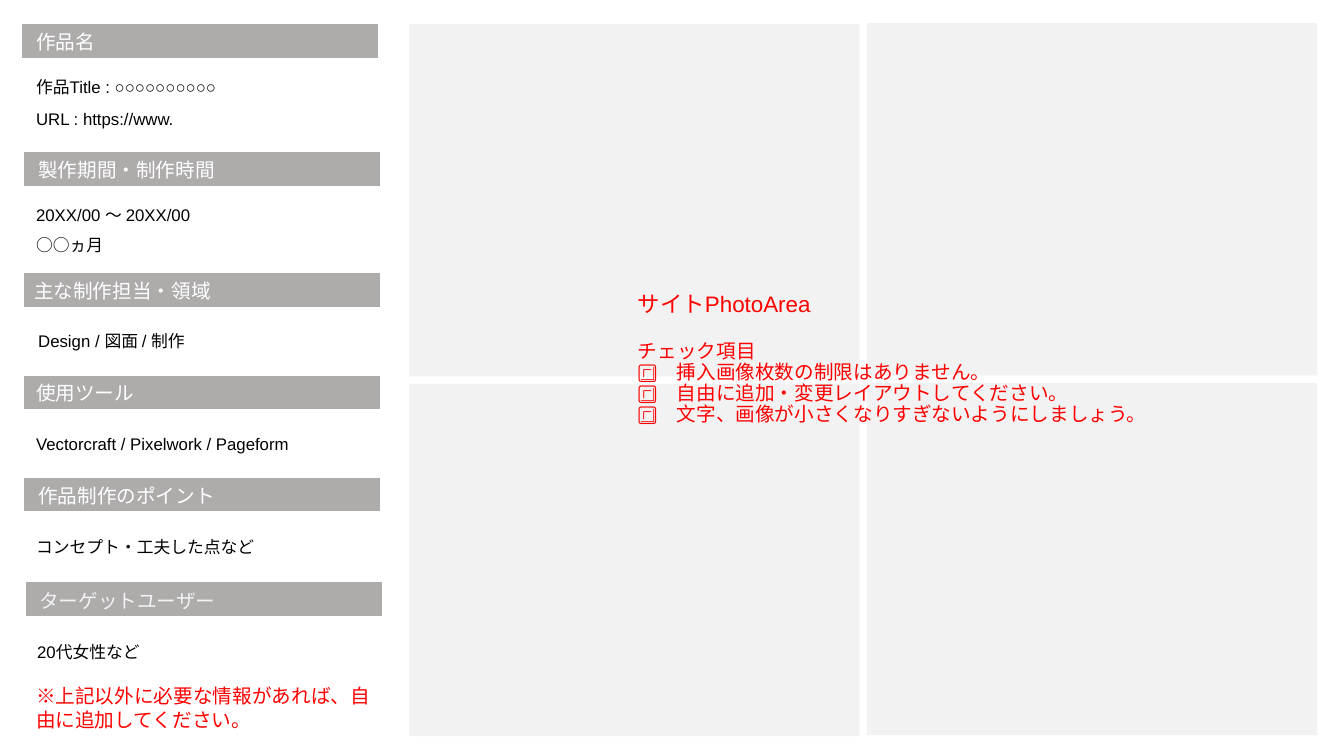
from dataclasses import dataclass

import pptx
import pptx.dml.color
import pptx.enum.shapes
import pptx.enum.text
import pptx.util

Pt = pptx.util.Pt
Anchor = pptx.enum.text.MSO_ANCHOR

COLOURS = {
    "white": "FFFFFF", "soft_white": "F3F3F3", "black": "000000",
    "red": "FF0000", "bar": "AEABAB", "photo": "F2F2F2",
}
FONT = "Arial"
BAR_WIDTH, BAR_HEIGHT = 255.6, 25.2
HEADING_WIDTH, BODY_WIDTH = 247, 262
PHOTO_WIDTH, PHOTO_HEIGHT = 321.8, 251.6


@dataclass
class Section:
    heading: str
    lines: list[str]
    bar_left: float
    bar_top: float
    heading_left: float
    heading_top: float
    body_left: float
    body_top: float
    body_height: float = 24.5
    body_spacing: float = 0.9
    compact: bool = False  # heading centred vertically with tight lines
    heading_colour: str = "white"


SECTIONS = [
    Section("作品名", ["作品Title : ○○○○○○○○○○", "URL : https://www."],
            15.1, 16.6, 18.7, 19.4, 18.7, 52.6, body_height=26.6, compact=True),
    Section("製作期間・制作時間", ["20XX/00 ～ 20XX/00", "○○ヵ月"],
            16.6, 108, 20.2, 110.9, 18.7, 145.4, body_height=40.3,
            body_spacing=0.8, compact=True),
    Section("主な制作担当・領域", ["Design / 図面 / 制作"],
            16.6, 194.4, 17.3, 197.3, 20.2, 234, compact=True),
    Section("使用ツール", ["Vectorcraft / Pixelwork / Pageform"],
            16.6, 267.8, 18.7, 268.6, 18.7, 308.2),
    Section("作品制作のポイント", ["コンセプト・工夫した点など"],
            16.6, 340.6, 20.2, 342, 18.7, 381.6),
    Section("ターゲットユーザー", ["20代女性など"],
            18, 415.4, 20.9, 416.9, 19.4, 456.5, heading_colour="soft_white"),
]

CHECKS = [
    "挿入画像枚数の制限はありません。",
    "自由に追加・変更レイアウトしてください。",
    "文字、画像が小さくなりすぎないようにしましょう。",
]


def colour(name: str) -> pptx.dml.color.RGBColor:
    return pptx.dml.color.RGBColor.from_string(COLOURS[name])


def add_rectangle(page, left: float, top: float, width: float, height: float,
                  fill: str, line: str | None = None) -> None:
    shape = page.shapes.add_shape(pptx.enum.shapes.MSO_SHAPE.RECTANGLE,
                                  Pt(left), Pt(top), Pt(width), Pt(height))
    shape.shadow.inherit = False
    shape.fill.solid()
    shape.fill.fore_color.rgb = colour(fill)
    if line:
        shape.line.color.rgb = colour(line)
        shape.line.width = Pt(1)
    else:
        shape.line.fill.background()


def add_box(page, left: float, top: float, width: float, height: float,
            anchor=Anchor.TOP):
    box = page.shapes.add_textbox(Pt(left), Pt(top), Pt(width), Pt(height))
    frame = box.text_frame
    frame.word_wrap = True
    frame.vertical_anchor = anchor
    return frame


def write(frame, text: str, *, size: float, ink: str, spacing: float | None = None,
          before: float = 0, after: float = 0) -> None:
    """Fill the first paragraph if it is free, otherwise add one."""
    para = frame.paragraphs[0]
    if para.runs:
        para = frame.add_paragraph()
    para.line_spacing = spacing
    para.space_before, para.space_after = Pt(before), Pt(after)
    span = para.add_run()
    span.text = text
    span.font.name = FONT
    span.font.size = Pt(size)
    span.font.color.rgb = colour(ink)


def draw_section(page, section: Section) -> None:
    add_rectangle(page, section.bar_left, section.bar_top, BAR_WIDTH, BAR_HEIGHT,
                  "bar", line="white")
    heading = add_box(page, section.heading_left, section.heading_top, HEADING_WIDTH,
                      23 if section.compact else 24.5,
                      Anchor.MIDDLE if section.compact else Anchor.TOP)
    write(heading, section.heading, size=14, ink=section.heading_colour,
          spacing=0.9 if section.compact else None)
    body = add_box(page, section.body_left, section.body_top, BODY_WIDTH,
                   section.body_height)
    for index, line in enumerate(section.lines):
        write(body, line, size=12, ink="black", spacing=section.body_spacing,
              before=10 if index else 0)


def main() -> None:
    deck = pptx.Presentation()
    deck.slide_width, deck.slide_height = Pt(960), Pt(540)
    page = deck.slides.add_slide(deck.slide_layouts.get_by_name("Blank"))

    # Photo area: two by two panels, the right column slightly higher
    for left, first_top in ((292.3, 17.3), (619.2, 16.6)):
        for row in range(2):
            add_rectangle(page, left, first_top + row * 257, PHOTO_WIDTH,
                          PHOTO_HEIGHT, "photo")

    # Left column
    for section in SECTIONS:
        draw_section(page, section)
    remark = add_box(page, 18.7, 485.3, BAR_WIDTH, 40.3)
    write(remark, "※上記以外に必要な情報があれば、自由に追加してください。",
          size=14, ink="red")

    # Check list over the photo area
    checklist = add_box(page, 448.6, 205.9, 401.8, 129.6)
    write(checklist, "サイトPhotoArea", size=16, ink="red", spacing=0.9, after=17)
    for line in ["チェック項目"] + [f"🔳　{check}" for check in CHECKS]:
        write(checklist, line, size=14, ink="red", spacing=0.9)

    deck.save("out.pptx")


if __name__ == "__main__":
    main()
